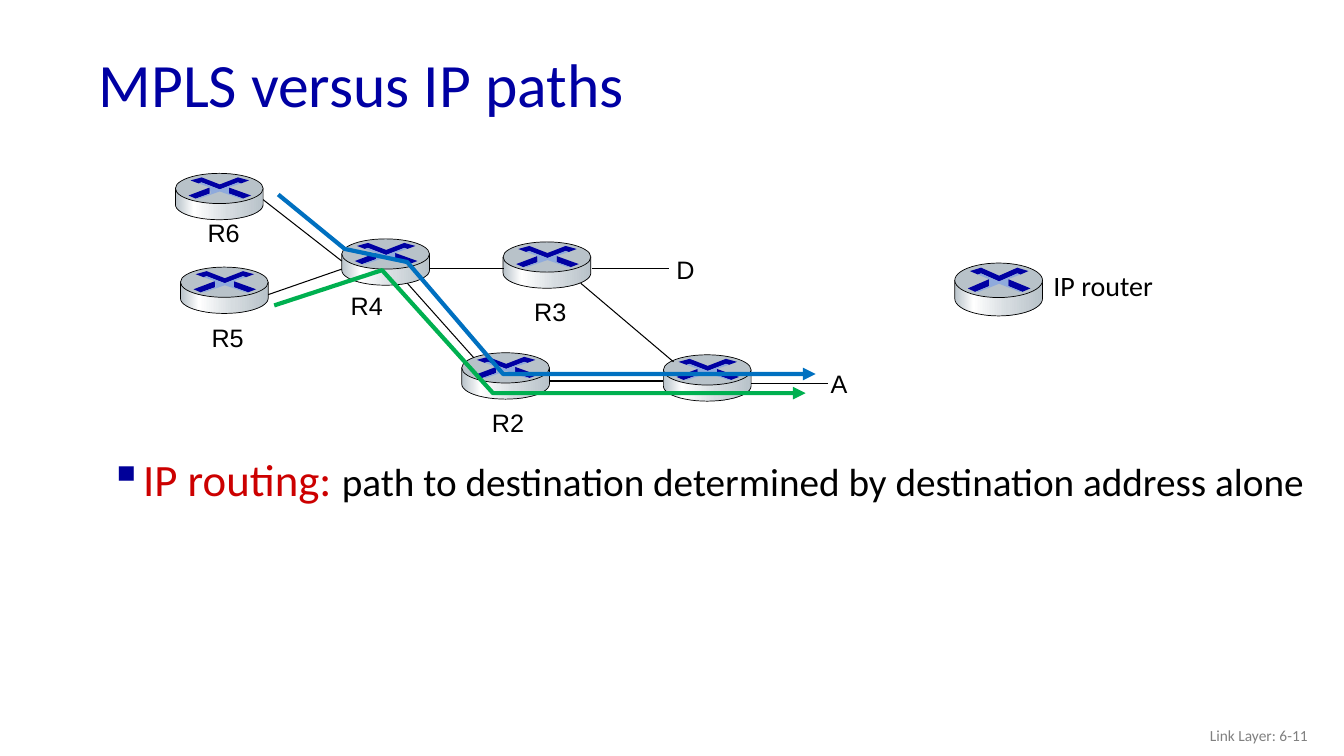
from math import cos, pi, sin

from lxml import etree
from pptx import Presentation
from pptx.dml.color import RGBColor
from pptx.enum.shapes import MSO_CONNECTOR, MSO_SHAPE
from pptx.enum.text import MSO_ANCHOR, PP_ALIGN
from pptx.oxml.ns import qn
from pptx.util import Inches, Pt

OVAL = MSO_SHAPE.OVAL
STRAIGHT = MSO_CONNECTOR.STRAIGHT
TOP, MIDDLE = MSO_ANCHOR.TOP, MSO_ANCHOR.MIDDLE
LEFT, RIGHT = PP_ALIGN.LEFT, PP_ALIGN.RIGHT

BLACK = RGBColor(0, 0, 0)
WHITE = RGBColor(0xFF, 0xFF, 0xFF)
NAVY = RGBColor(0, 0, 0xA3)
SKY = RGBColor(0x8F, 0xAA, 0xDC)
STEEL = RGBColor(0xB8, 0xC2, 0xC9)
SILVER = RGBColor(0xD6, 0xDC, 0xE0)
GRAY = RGBColor(0x80, 0x80, 0x80)
RED = RGBColor(0xCC, 0, 0)
BULLET = RGBColor(0, 0, 0x99)
BLUE = RGBColor(0, 0x70, 0xC0)
GREEN = RGBColor(0, 0xB0, 0x50)

SHEEN = [(0, STEEL), (21, WHITE), (60, SILVER), (100, STEEL)]

# Router outlines, in inches from its top left corner
WIDE, RIM, DEEP = 0.87, 0.3, 0.46
ARC = [(WIDE / 2 * (1 + cos(pi * i / 24)), 0.31 + 0.15 * sin(pi * i / 24))
       for i in range(25)]
BODY = [(WIDE, RIM / 2), *ARC, (0, RIM / 2)]
MARKS = [
    (NAVY, [(0.62, 0.04), (0.73, 0.07), (0.65, 0.1), (0.62, 0.09), (0.44, 0.16),
            (0.26, 0.09), (0.23, 0.1), (0.15, 0.07), (0.26, 0.04), (0.44, 0.11)]),
    (NAVY, [(0.53, 0.14), (0.75, 0.22), (0.67, 0.25), (0.53, 0.2)]),
    (NAVY, [(0.34, 0.14), (0.34, 0.2), (0.2, 0.25), (0.13, 0.22)]),
    (SKY, [(0.23, 0.1), (0.26, 0.09), (0.44, 0.16), (0.62, 0.09), (0.65, 0.1),
           (0.53, 0.14), (0.53, 0.2), (0.67, 0.25), (0.64, 0.25), (0.44, 0.18),
           (0.24, 0.25), (0.21, 0.25), (0.35, 0.2), (0.34, 0.14)]),
]

CORE = [(3.39, 2.37), (4.99, 2.4), (4.58, 3.5), (6.58, 3.52)]
EDGE = [(1.74, 1.72), (1.79, 2.65)]
LINKS = [
    (2.57, 1.95, 3.39, 2.59), (2.64, 2.93, 3.39, 2.67), (4.27, 2.66, 5, 2.66),
    (4.04, 2.81, 4.7, 3.55), (5.45, 3.78, 6.58, 3.78), (5.76, 2.81, 6.68, 3.59),
    (7.45, 3.8, 8.21, 3.8), (5.87, 2.66, 6.64, 2.66),
]
LABELS = [
    ("R2", 4.78, 3.99), ("D", 6.61, 2.47), ("R3", 5.2, 2.89), ("R5", 2, 3.15),
    ("A", 8.14, 3.6), ("R6", 1.96, 2.11), ("R4", 3.38, 2.83),
]
ROUTES = [
    (BLUE, [(2.76, 1.93), (3.42, 2.47), (4.04, 2.6), (4.99, 3.71), (8.09, 3.71)]),
    (GREEN, [(2.72, 3.03), (3.79, 2.68), (4.89, 3.9), (7.99, 3.9)]),
]


def add_outline(shapes, points, close=True):
    spots = [(Inches(x), Inches(y)) for x, y in points]
    pen = shapes.build_freeform(*spots[0])
    pen.add_line_segments(spots[1:], close=close)
    shape = pen.convert_to_shape()
    shape.shadow.inherit = False
    return shape


def set_solid(shape, color):
    shape.fill.solid()
    shape.fill.fore_color.rgb = color


def set_line(shape, color, width):
    shape.line.color.rgb = color
    shape.line.width = Pt(width)


def set_sheen(shape):
    shape.fill.gradient()
    shape.fill.gradient_angle = 0
    stops = shape._element.spPr.find(qn("a:gradFill")).find(qn("a:gsLst"))
    for stop in list(stops):
        stops.remove(stop)
    for place, color in SHEEN:
        stop = etree.SubElement(stops, qn("a:gs"), pos=str(place * 1000))
        etree.SubElement(stop, qn("a:srgbClr"), val=str(color))


def add_router(slide, left, top, tall=1):
    """Draw a router; tall stretches its height."""
    shapes = slide.shapes.add_group_shape().shapes

    def place(points):
        return [(left + x, top + y * tall) for x, y in points]

    body = add_outline(shapes, place(BODY))
    set_sheen(body)
    set_line(body, BLACK, 0.5)
    lid = shapes.add_shape(OVAL, Inches(left), Inches(top),
                           Inches(WIDE), Inches(RIM * tall))
    lid.shadow.inherit = False
    set_solid(lid, STEEL)
    set_line(lid, BLACK, 0.5)
    for color, points in MARKS:
        mark = add_outline(shapes, place(points))
        set_solid(mark, color)
        mark.line.fill.background()


def add_link(slide, *ends):
    link = slide.shapes.add_connector(STRAIGHT, *map(Inches, ends))
    set_line(link, BLACK, 0.75)
    etree.SubElement(link._element.spPr, qn("a:effectLst"))


def add_route(slide, color, points):
    route = add_outline(slide.shapes, points, close=False)
    route.fill.background()
    set_line(route, color, 3)
    etree.SubElement(route.line._get_or_add_ln(), qn("a:tailEnd"), type="triangle")


def add_text(slide, box, runs, font="Calibri", wrap=True, anchor=TOP,
             align=LEFT, space=1.0):
    """Add one paragraph of (text, size, color) runs and return it."""
    frame = slide.shapes.add_textbox(*map(Inches, box)).text_frame
    frame.word_wrap = wrap
    frame.vertical_anchor = anchor
    para = frame.paragraphs[0]
    para.alignment = align
    para.line_spacing = space
    for text, size, color in runs:
        run = para.add_run()
        run.text = text
        run.font.name = font
        run.font.size = Pt(size)
        run.font.color.rgb = color
    return para


def add_bullet(para):
    props = para._p.get_or_add_pPr()
    props.set("marL", str(Inches(0.31)))
    props.set("indent", str(Inches(-0.31)))
    tint = etree.SubElement(props, qn("a:buClr"))
    etree.SubElement(tint, qn("a:srgbClr"), val=str(BULLET))
    etree.SubElement(props, qn("a:buChar"), char="▪")


def main():
    deck = Presentation()
    deck.slide_width, deck.slide_height = Inches(13.33), Inches(7.5)
    slide = deck.slides.add_slide(deck.slide_layouts[6])

    for spot in CORE:
        add_router(slide, *spot)
    add_text(slide, (0.88, 0.38, 11.5, 0.98),
             [("MPLS versus IP paths", 44, NAVY)], anchor=MIDDLE, space=0.9)
    add_text(slide, (10.07, 7.1, 3, 0.4), [("Link Layer: 6-11", 11, GRAY)],
             anchor=MIDDLE, align=RIGHT)
    for ends in LINKS:
        add_link(slide, *ends)
    for name, left, top in LABELS:
        add_text(slide, (left, top, 0.52 if len(name) > 1 else 0.38, 0.4),
                 [(name, 18, BLACK)], font="Arial", wrap=False)
    for spot in EDGE:
        add_router(slide, *spot)
    for color, points in ROUTES:
        add_route(slide, color, points)

    point = add_text(slide, (0.99, 4.51, 12.17, 0.62), [
        ("IP routing: ", 32, RED),
        ("path to destination determined by destination address alone", 28, BLACK),
    ], space=0.85)
    add_bullet(point)
    add_text(slide, (10.35, 2.61, 1.2, 0.44), [("IP router", 20, BLACK)], wrap=False)
    add_router(slide, 9.47, 2.61, tall=1.14)
    deck.save("out.pptx")


if __name__ == "__main__":
    main()
